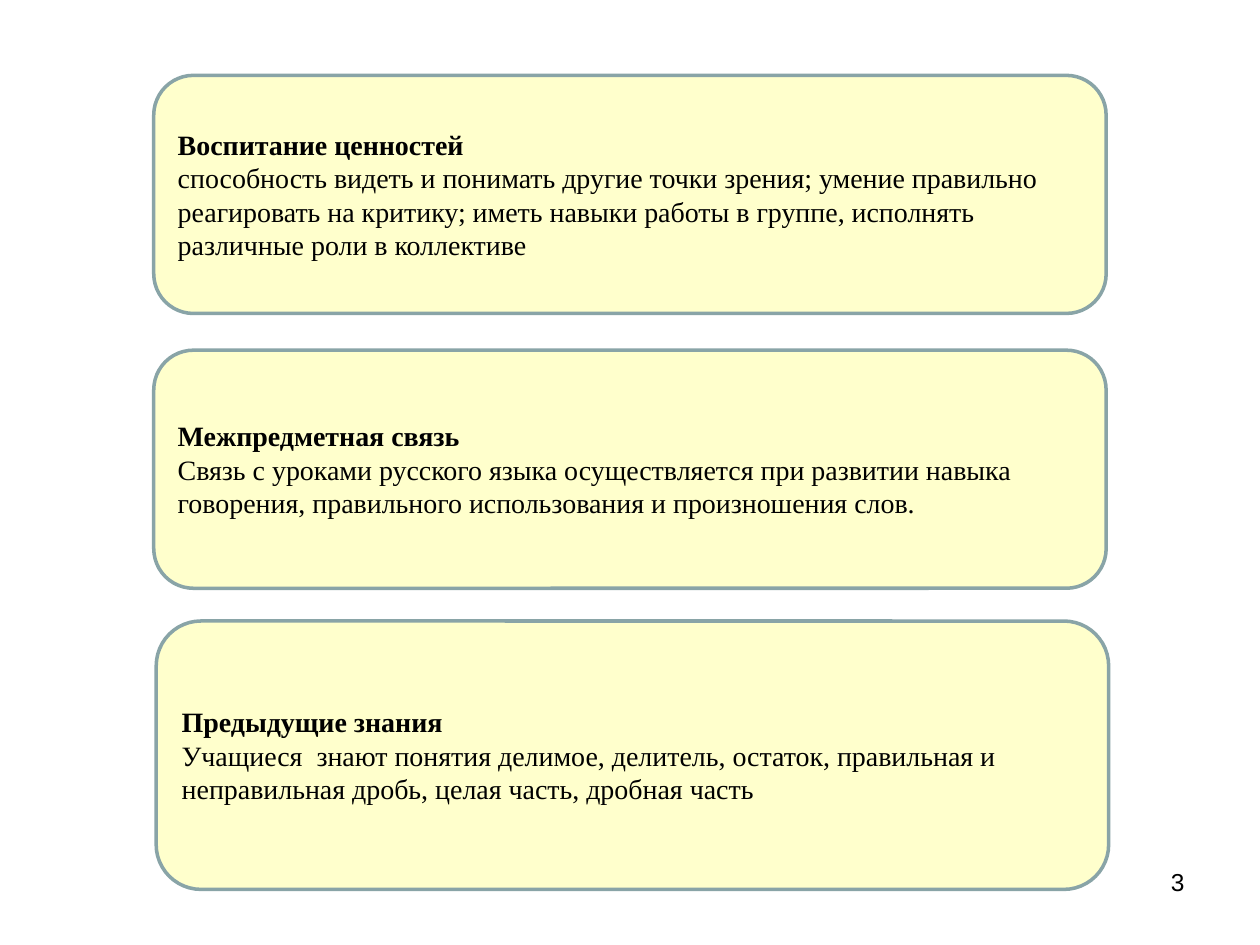
from pptx import Presentation
from pptx.dml.color import RGBColor
from pptx.enum.shapes import MSO_SHAPE as SHAPE
from pptx.enum.text import MSO_ANCHOR as ANCHOR, PP_ALIGN as ALIGN
from pptx.util import Cm, Pt

COLORS = {"card": "FFFFCC", "border": "89A4A7", "text": "000000"}
CARD_WIDTH = 19.2
PAGE_NUMBER = "3"

# left, top, height in cm, then heading and body
CARDS = [
    (3.1, 1.52, 4.8, "Воспитание ценностей",
     "способность видеть и понимать другие точки зрения; умение правильно "
     "реагировать на критику; иметь навыки работы в группе, исполнять "
     "различные роли в коллективе"),
    (3.1, 7.06, 4.8, "Межпредметная связь",
     "Связь с уроками русского языка осуществляется при развитии навыка "
     "говорения, правильного использования и произношения слов."),
    (3.15, 12.52, 5.41, "Предыдущие знания",
     "Учащиеся  знают понятия делимое, делитель, остаток, правильная и "
     "неправильная дробь, целая часть, дробная часть"),
]


def color(name):
    return RGBColor.from_string(COLORS[name])


def write(p, text, font="Times New Roman", size=16, bold=False, align=ALIGN.LEFT):
    p.alignment = align
    r = p.add_run()
    r.text = text
    r.font.name = font
    r.font.size = Pt(size)
    r.font.bold = bold
    r.font.color.rgb = color("text")


def add_card(slide, left, top, height, heading, body):
    s = slide.shapes.add_shape(SHAPE.ROUNDED_RECTANGLE, Cm(left), Cm(top),
                               Cm(CARD_WIDTH), Cm(height))
    s.shadow.inherit = False
    s.fill.solid()
    s.fill.fore_color.rgb = color("card")
    s.line.color.rgb = color("border")
    s.line.width = Pt(2)
    tf = s.text_frame
    tf.word_wrap = True
    tf.vertical_anchor = ANCHOR.MIDDLE
    write(tf.paragraphs[0], heading, bold=True)
    write(tf.add_paragraph(), body)


def main():
    prs = Presentation()
    prs.slide_width, prs.slide_height = Cm(25.4), Cm(19.05)
    slide = prs.slides.add_slide(prs.slide_layouts[6])
    tf = slide.shapes.add_textbox(Cm(18.21), Cm(17.35), Cm(5.92), Cm(1.32)).text_frame
    tf.word_wrap = True
    write(tf.paragraphs[0], PAGE_NUMBER, font="Arial", size=14, align=ALIGN.RIGHT)
    for card in CARDS:
        add_card(slide, *card)
    prs.save("out.pptx")


if __name__ == "__main__":
    main()
